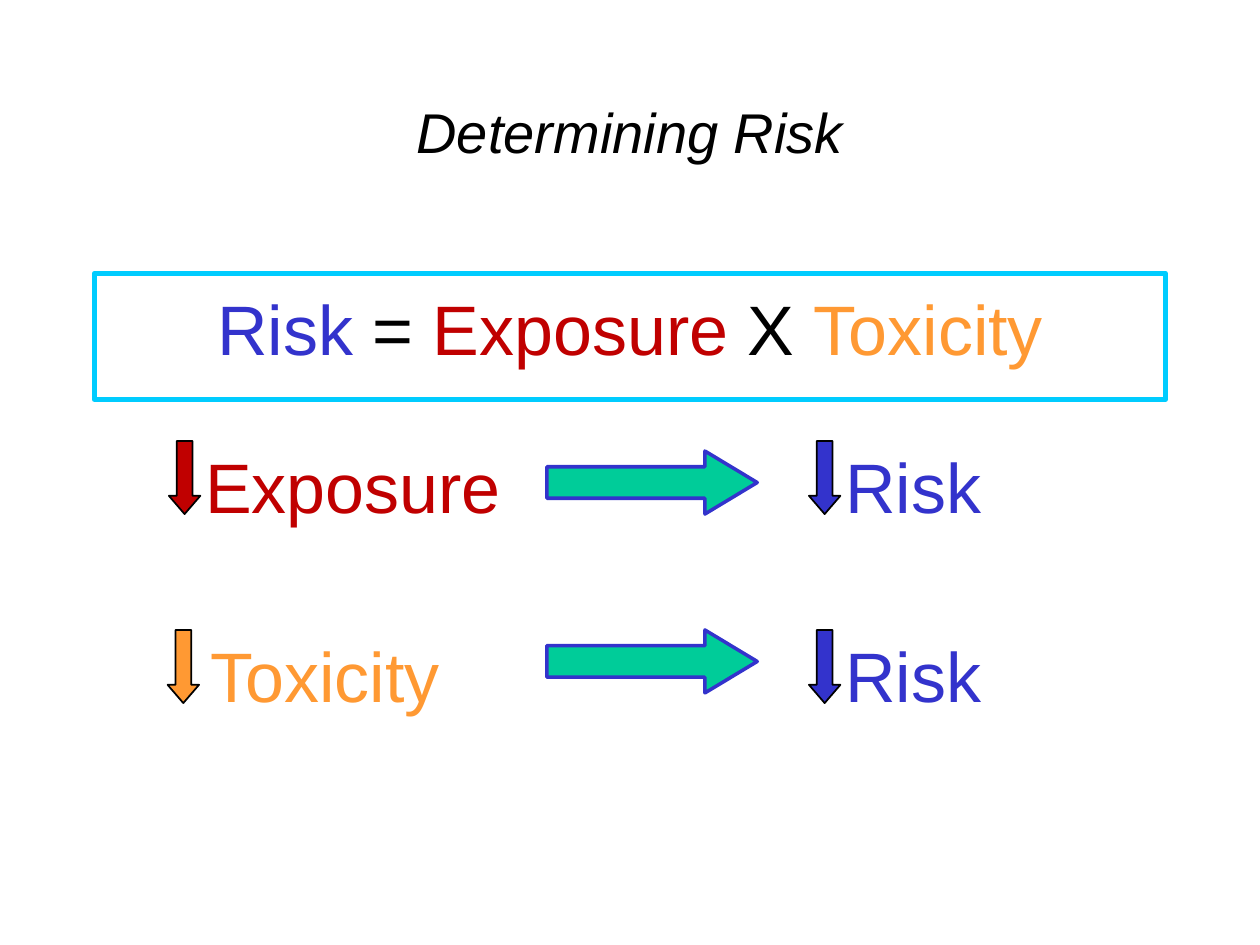
"""Build the Determining Risk slide: the risk equation and two cause-and-effect rows."""
import pptx
import pptx.util
from pptx.dml.color import RGBColor
from pptx.enum.shapes import MSO_SHAPE
from pptx.enum.text import MSO_ANCHOR, PP_ALIGN
from pptx.util import Inches, Pt

COLORS = {
    "black": "000000", "risk": "3333CC", "exposure": "C00000",
    "toxicity": "FF9933", "frame": "00CCFF", "arrow": "00CC99",
}


def write(sp, runs, size, italic=False, top=0.1):
    tf = sp.text_frame
    layout = {"word_wrap": True, "vertical_anchor": MSO_ANCHOR.TOP, "margin_top": Inches(top)}
    for name, value in layout.items():
        setattr(tf, name, value)
    p = tf.paragraphs[0]
    p.alignment = PP_ALIGN.CENTER
    for text, color in runs:
        r = p.add_run()
        r.text = text
        for name, value in {"name": "Arial", "size": Pt(size), "italic": italic}.items():
            setattr(r.font, name, value)
        r.font.color.rgb = RGBColor.from_string(COLORS[color])


def add_shape(kind, box, fill, line, width, adjustments=()):
    sp = s.shapes.add_shape(kind, *map(Inches, box))
    sp.shadow.inherit = False
    if fill:
        sp.fill.solid()
        sp.fill.fore_color.rgb = RGBColor.from_string(COLORS[fill])
    else:
        sp.fill.background()
    sp.line.color.rgb = RGBColor.from_string(COLORS[line])
    sp.line.width = Pt(width)
    for i, value in enumerate(adjustments):
        sp.adjustments[i] = value
    return sp


prs = pptx.Presentation()
prs.slide_width, prs.slide_height = Inches(10), Inches(7.5)
s = prs.slides.add_slide(prs.slide_layouts[5])

title = s.shapes.title
for name, value in {"left": 0.75, "top": 0.67, "width": 8.5, "height": 1.25}.items():
    setattr(title, name, Inches(value))
write(title, [("Determining Risk", "black")], 32, italic=True)

equation = add_shape(MSO_SHAPE.RECTANGLE, (0.75, 2.17, 8.5, 1), None, "frame", 3)
write(equation, [("Risk", "risk"), (" = ", "black"), ("Exposure", "exposure"),
                 (" X ", "black"), ("Toxicity", "toxicity")], 40)

rows = [("Exposure", 3.42, 1.34, 2.92, 3.58), ("Toxicity", 4.92, 1.33, 2.5, 5)]
for cause, top, left, width, arrow_top in rows:
    terms = [(cause, left, width, left), ("Risk", 6, 2.5, 6.42)]
    for text, x, w, arrow_x in terms:
        sp = s.shapes.add_textbox(*map(Inches, (x, top, w, 0.77)))
        write(sp, [(text, text.lower())], 40)
        add_shape(MSO_SHAPE.DOWN_ARROW, (arrow_x, top + 0.08, 0.25, 0.58),
                  text.lower(), "black", 1, (0.5, 0.58))
    add_shape(MSO_SHAPE.RIGHT_ARROW, (4.34, arrow_top, 1.67, 0.5),
              "arrow", "risk", 2, (0.5, 0.83))

prs.save("out.pptx")
